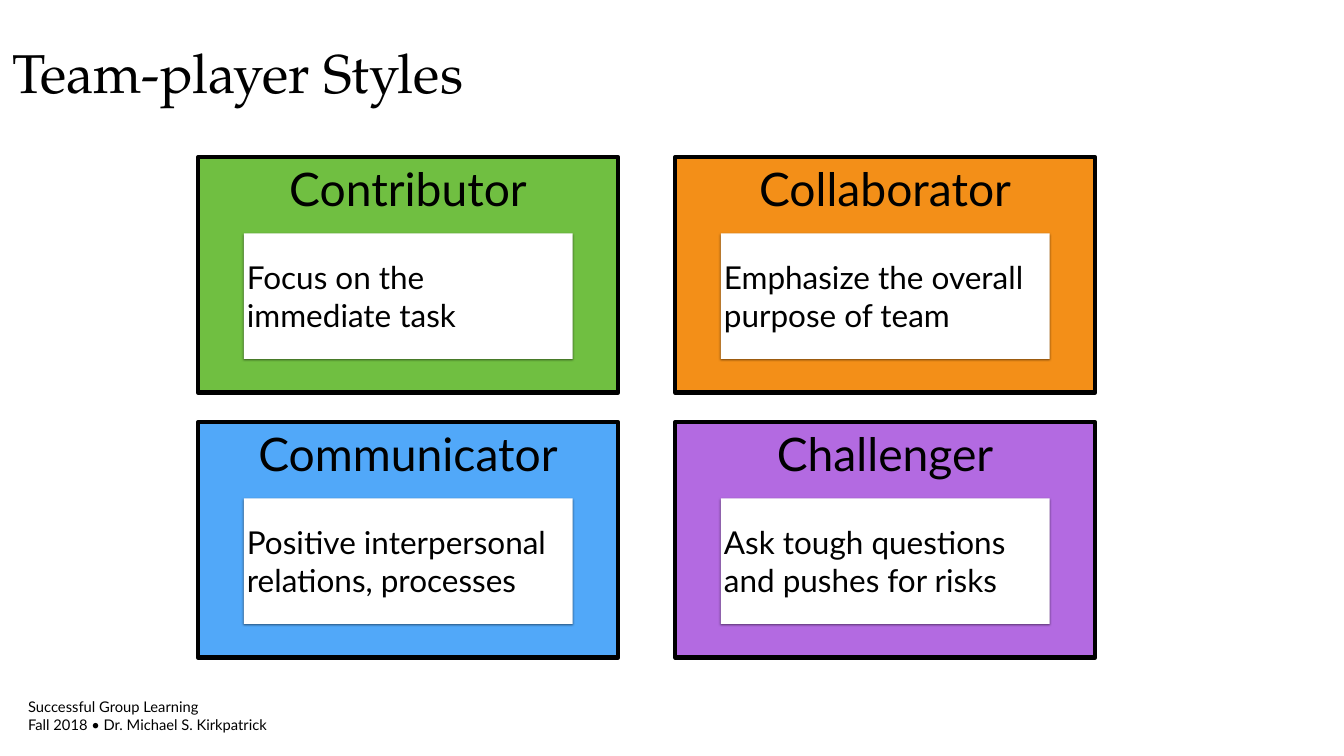
"""Build the slide of four team-player styles."""
from lxml.etree import SubElement
from pptx import Presentation
from pptx.dml.color import RGBColor
from pptx.enum.shapes import MSO_SHAPE as Shape
from pptx.enum.text import MSO_ANCHOR as Anchor, MSO_AUTO_SIZE as AutoSize, PP_ALIGN as Align
from pptx.oxml.ns import qn
from pptx.util import Pt

BLACK = RGBColor(0x00, 0x00, 0x00)
WHITE = RGBColor(0xFF, 0xFF, 0xFF)
GREEN = RGBColor(0x70, 0xBF, 0x41)
ORANGE = RGBColor(0xF3, 0x8F, 0x18)
BLUE = RGBColor(0x51, 0xA8, 0xF9)
PURPLE = RGBColor(0xB3, 0x6A, 0xE1)

TITLE = "Team-player Styles"
FOOTER = ["Successful Group Learning", "Fall 2018 • Dr. Michael S. Kirkpatrick"]
STYLES = [
    ("Contributor", "Focus on the immediate task", GREEN),
    ("Collaborator", "Emphasize the overall purpose of team", ORANGE),
    ("Communicator", "Positive interpersonal relations, processes", BLUE),
    ("Challenger", "Ask tough questions and pushes for risks", PURPLE),
]

COLUMNS = 2
GRID_LEFT, GRID_TOP = 188.6, 149.9
CARD_WIDTH, CARD_HEIGHT = 400.3, 224
COLUMN_STEP, ROW_STEP = 454.3, 252.4
NOTE_WIDTH, NOTE_HEIGHT, NOTE_DROP = 313.2, 119.5, 72.4


def write(box, *lines, size, font="Lato", align=Align.LEFT, anchor=Anchor.MIDDLE, wrap=True):
    frame = box.text_frame
    frame.word_wrap = wrap
    frame.auto_size = AutoSize.NONE
    frame.vertical_anchor = anchor
    frame.margin_left = frame.margin_right = frame.margin_top = frame.margin_bottom = Pt(3)
    for index, line in enumerate(lines):
        para = frame.add_paragraph() if index else frame.paragraphs[0]
        para.alignment = align
        span = para.add_run()
        span.text = line
        span.font.name, span.font.size = font, Pt(size)
        span.font.color.rgb = BLACK


def add_rectangle(page, left, top, width, height, color):
    box = page.shapes.add_shape(Shape.RECTANGLE, Pt(left), Pt(top), Pt(width), Pt(height))
    box.shadow.inherit = False
    box.fill.solid()
    box.fill.fore_color.rgb = color
    return box


def add_shadow(box):
    effects = box.element.spPr.find(qn("a:effectLst"))
    shadow = SubElement(effects, qn("a:outerShdw"), blurRad=str(Pt(2)), dist=str(Pt(1)),
                        dir="5400000", rotWithShape="0")
    color = SubElement(shadow, qn("a:srgbClr"), val=str(BLACK))
    SubElement(color, qn("a:alpha"), val="50000")


def main():
    deck = Presentation()
    deck.slide_width, deck.slide_height = Pt(1280), Pt(720)
    page = deck.slides.add_slide(deck.slide_layouts.get_by_name("Title Only"))

    footer = page.shapes.add_textbox(Pt(23.8), Pt(660.2), Pt(233.3), Pt(43.2))
    write(footer, *FOOTER, size=14, wrap=False)

    title = page.shapes.title
    title.left, title.top, title.width, title.height = Pt(8.6), Pt(28.8), Pt(814.3), Pt(79.2)
    write(title, TITLE, size=52, font="TeX Gyre Pagella")

    for index, (name, note_text, color) in enumerate(STYLES):
        row, column = divmod(index, COLUMNS)
        left, top = GRID_LEFT + column * COLUMN_STEP, GRID_TOP + row * ROW_STEP
        card = add_rectangle(page, left, top, CARD_WIDTH, CARD_HEIGHT, color)
        card.line.color.rgb = BLACK
        card.line.width = Pt(4)
        write(card, name, size=44, align=Align.CENTER, anchor=Anchor.TOP)

        note_left = left + (CARD_WIDTH - NOTE_WIDTH) / 2
        note = add_rectangle(page, note_left, top + NOTE_DROP, NOTE_WIDTH, NOTE_HEIGHT, WHITE)
        note.line.fill.background()
        add_shadow(note)
        write(note, note_text, size=30)

    deck.save("out.pptx")


if __name__ == "__main__":
    main()
